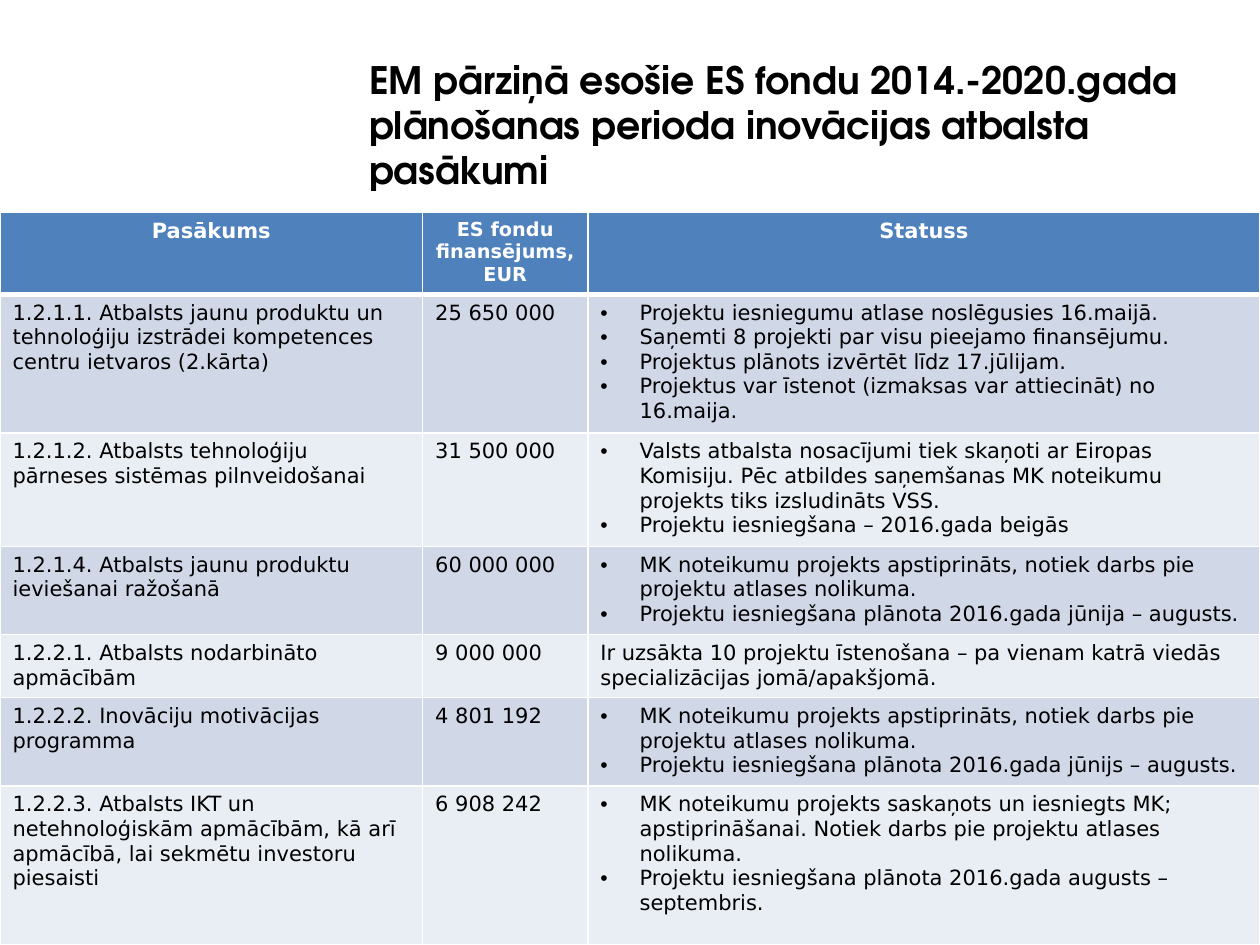
from lxml.etree import SubElement
from pptx import Presentation
from pptx.dml.color import RGBColor
from pptx.enum.text import MSO_ANCHOR, PP_ALIGN
from pptx.oxml.ns import qn
from pptx.util import Cm, Pt

BLACK = RGBColor(0x00, 0x00, 0x00)
WHITE = RGBColor(0xFF, 0xFF, 0xFF)
BLUE = RGBColor(0x4F, 0x81, 0xBD)
BANDS = [RGBColor(0xD0, 0xD8, 0xE8), RGBColor(0xE9, 0xED, 0xF4)]

TITLE = "EM pārziņā esošie ES fondu 2014.-2020.gada plānošanas perioda inovācijas atbalsta pasākumi"
HEADS = [("Pasākums", 12), ("ES fondu finansējums, EUR", 11), ("Statuss", 12)]
WIDTHS = [8.52, 3.33, 13.55]
HEIGHTS = [1.58, 2.76, 2.24, 1.75, 1.23, 1.75, 3.2]
ROWS = [
    ("1.2.1.1. Atbalsts jaunu produktu un tehnoloģiju izstrādei kompetences centru ietvaros (2.kārta)",
     "25 650 000",
     ["Projektu iesniegumu atlase noslēgusies 16.maijā.",
      "Saņemti 8 projekti par visu pieejamo finansējumu.",
      "Projektus plānots izvērtēt līdz 17.jūlijam.",
      "Projektus var īstenot (izmaksas var attiecināt) no 16.maija."]),
    ("1.2.1.2. Atbalsts tehnoloģiju pārneses sistēmas pilnveidošanai",
     "31 500 000",
     ["Valsts atbalsta nosacījumi tiek skaņoti ar Eiropas Komisiju. "
      "Pēc atbildes saņemšanas MK noteikumu projekts tiks izsludināts VSS.",
      "Projektu iesniegšana – 2016.gada beigās"]),
    ("1.2.1.4. Atbalsts jaunu produktu ieviešanai ražošanā",
     "60 000 000",
     ["MK noteikumu projekts apstiprināts, notiek darbs pie projektu atlases nolikuma.",
      "Projektu iesniegšana plānota 2016.gada jūnija – augusts."]),
    ("1.2.2.1. Atbalsts nodarbināto apmācībām",
     "9 000 000",
     ["Ir uzsākta 10 projektu īstenošana – pa vienam katrā viedās specializācijas jomā/apakšjomā."]),
    ("1.2.2.2. Inovāciju motivācijas programma",
     "4 801 192",
     ["MK noteikumu projekts apstiprināts, notiek darbs pie projektu atlases nolikuma.",
      "Projektu iesniegšana plānota 2016.gada jūnijs – augusts."]),
    ("1.2.2.3. Atbalsts IKT un netehnoloģiskām apmācībām, kā arī apmācībā, lai sekmētu investoru piesaisti",
     "6 908 242",
     ["MK noteikumu projekts saskaņots un iesniegts MK; apstiprināšanai. "
      "Notiek darbs pie projektu atlases nolikuma.",
      "Projektu iesniegšana plānota 2016.gada augusts – septembris."]),
]


def write(frame, lines, size=12, font="DejaVu Sans", color=BLACK, bold=False,
          align=PP_ALIGN.LEFT, bullet=False):
    """Fill a text frame with one paragraph per line."""
    frame.word_wrap = True
    for i, line in enumerate(lines):
        para = frame.add_paragraph() if i else frame.paragraphs[0]
        para.alignment = align
        if bullet:
            props = para._p.get_or_add_pPr()
            props.set("marL", str(Cm(0.79)))
            props.set("indent", str(-Cm(0.79)))
            SubElement(props, qn("a:buFont"), typeface="Arial")
            SubElement(props, qn("a:buChar"), char="•")
        run = para.add_run()
        run.text = line
        run.font.name = font
        run.font.size = Pt(size)
        run.font.bold = bold
        run.font.color.rgb = color


def paint(cell, fill, top=1, base=1):
    """Give a cell white borders and a solid fill."""
    props = cell._tc.get_or_add_tcPr()
    for side, width in zip("LRTB", (1, 1, top, base)):
        line = SubElement(props, qn(f"a:ln{side}"), w=str(Pt(width)))
        solid = SubElement(line, qn("a:solidFill"))
        SubElement(solid, qn("a:srgbClr"), val=str(WHITE))
    cell.fill.solid()
    cell.fill.fore_color.rgb = fill


def add_title(slide, left, top, width, height):
    """Place the slide heading in its box."""
    box = slide.shapes.add_textbox(Cm(left), Cm(top), Cm(width), Cm(height))
    write(box.text_frame, [TITLE], size=21.6, font="TeX Gyre Adventor", bold=True)
    box.text_frame.vertical_anchor = MSO_ANCHOR.MIDDLE


def add_grid(slide, left, top, width, height):
    """Place the table of measures, funding and status."""
    table = slide.shapes.add_table(len(HEIGHTS), len(WIDTHS), Cm(left), Cm(top),
                                   Cm(width), Cm(height)).table
    for col, size in zip(table.columns, WIDTHS):
        col.width = Cm(size)
    for row, size in zip(table.rows, HEIGHTS):
        row.height = Cm(size)
    for col, (head, size) in enumerate(HEADS):
        cell = table.cell(0, col)
        paint(cell, BLUE, base=3)
        write(cell.text_frame, [head], size=size, color=WHITE, bold=True,
              align=PP_ALIGN.CENTER)
    for row, (name, funds, status) in enumerate(ROWS, 1):
        for col, lines in enumerate(([name], [funds], status)):
            cell = table.cell(row, col)
            paint(cell, BANDS[(row - 1) % 2], top=3 if row == 1 else 1)
            write(cell.text_frame, lines, bullet=len(lines) > 1)


def main():
    """Build and save the slide."""
    deck = Presentation()
    deck.slide_width, deck.slide_height = Cm(25.4), Cm(19.05)
    slide = deck.slides.add_slide(deck.slide_layouts[6])
    add_title(slide, 7.19, 1.07, 16.94, 2.87)
    add_grid(slide, 0, 4.28, sum(WIDTHS), sum(HEIGHTS))
    deck.save("out.pptx")


if __name__ == "__main__":
    main()
